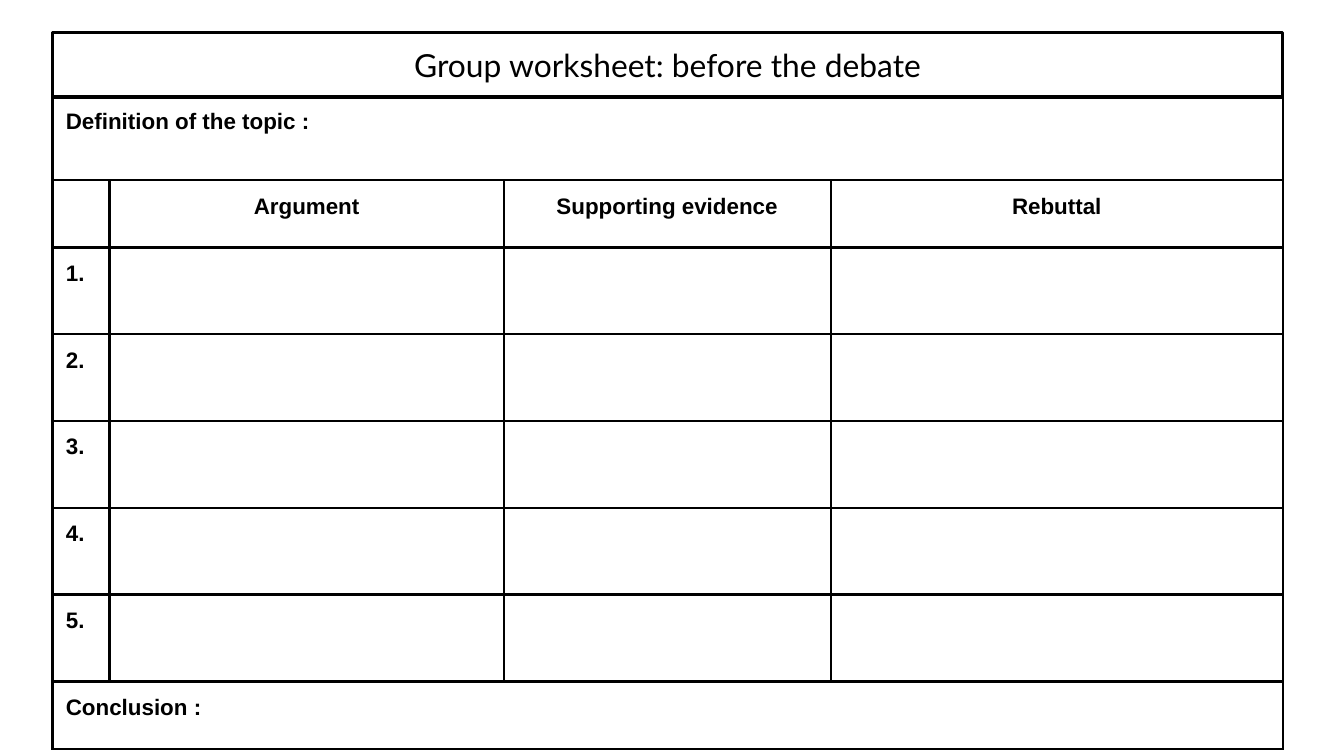
import pptx
import pptx.dml.color
import pptx.enum.text
import pptx.oxml
import pptx.oxml.ns
import pptx.util

Pt = pptx.util.Pt
PP_ALIGN = pptx.enum.text.PP_ALIGN
MSO_ANCHOR = pptx.enum.text.MSO_ANCHOR

BLACK = "000000"
LEFT, WIDTH = 28.1, 659.2
PADDING = 7.2
BORDER = 1.5


def color(hex_string):
    return pptx.dml.color.RGBColor.from_string(hex_string)


def add_borders(cell):
    properties = cell._tc.get_or_add_tcPr()
    for position, side in enumerate(("lnL", "lnR", "lnT", "lnB")):
        line = pptx.oxml.parse_xml(
            f'<a:{side} {pptx.oxml.ns.nsdecls("a")} w="{Pt(BORDER)}">'
            f'<a:solidFill><a:srgbClr val="{BLACK}"/></a:solidFill></a:{side}>'
        )
        properties.insert(position, line)


presentation = pptx.Presentation()
presentation.slide_width = Pt(720)
presentation.slide_height = Pt(405)
slide = presentation.slides.add_slide(presentation.slide_layouts[5])

# Title
title = slide.shapes.title
title.left, title.top, title.width, title.height = Pt(LEFT), Pt(17.3), Pt(WIDTH), Pt(35.2)
title.line.color.rgb = color(BLACK)
title.line.width = Pt(BORDER)
frame = title.text_frame
frame.text = "Group worksheet: before the debate"
frame.word_wrap = True
frame.auto_size = pptx.enum.text.MSO_AUTO_SIZE.NONE
frame.vertical_anchor = MSO_ANCHOR.MIDDLE
frame.margin_left = frame.margin_right = frame.margin_top = frame.margin_bottom = Pt(PADDING)
paragraph = frame.paragraphs[0]
paragraph.alignment = PP_ALIGN.CENTER
paragraph.font.name = "Lato"
paragraph.font.size = Pt(17)
paragraph.font.color.rgb = color(BLACK)

# Worksheet table
rows = [
    ["Definition of the topic :", "", "", ""],
    ["", "Argument", "Supporting evidence", "Rebuttal"],
    *[[f"{number}.", "", "", ""] for number in range(1, 6)],
    ["Conclusion :", "", "", ""],
]
column_widths = [30.6, 211.2, 175.2, 242.2]
row_heights = [45.2, 36] + [46.5] * 5 + [36.2]

table = slide.shapes.add_table(
    len(rows), len(column_widths), Pt(LEFT), Pt(51.4), Pt(WIDTH), Pt(sum(row_heights))
).table
table.first_row = False
table.horz_banding = False
for column, width in zip(table.columns, column_widths):
    column.width = Pt(width)
for row, height in zip(table.rows, row_heights):
    row.height = Pt(height)
for row_index in (0, len(rows) - 1):
    table.cell(row_index, 0).merge(table.cell(row_index, len(column_widths) - 1))

for row_index, texts in enumerate(rows):
    for column_index, text in enumerate(texts):
        cell = table.cell(row_index, column_index)
        cell.fill.background()
        add_borders(cell)
        cell.margin_left = cell.margin_right = Pt(PADDING)
        cell.margin_top = cell.margin_bottom = Pt(PADDING)
        cell.vertical_anchor = MSO_ANCHOR.TOP
        if text:
            cell.text = text
        paragraph = cell.text_frame.paragraphs[0]
        paragraph.alignment = PP_ALIGN.CENTER if row_index == 1 else PP_ALIGN.LEFT
        paragraph.font.name = "Arial"
        paragraph.font.size = Pt(12)
        paragraph.font.bold = True
        paragraph.font.color.rgb = color(BLACK)

presentation.save("out.pptx")
